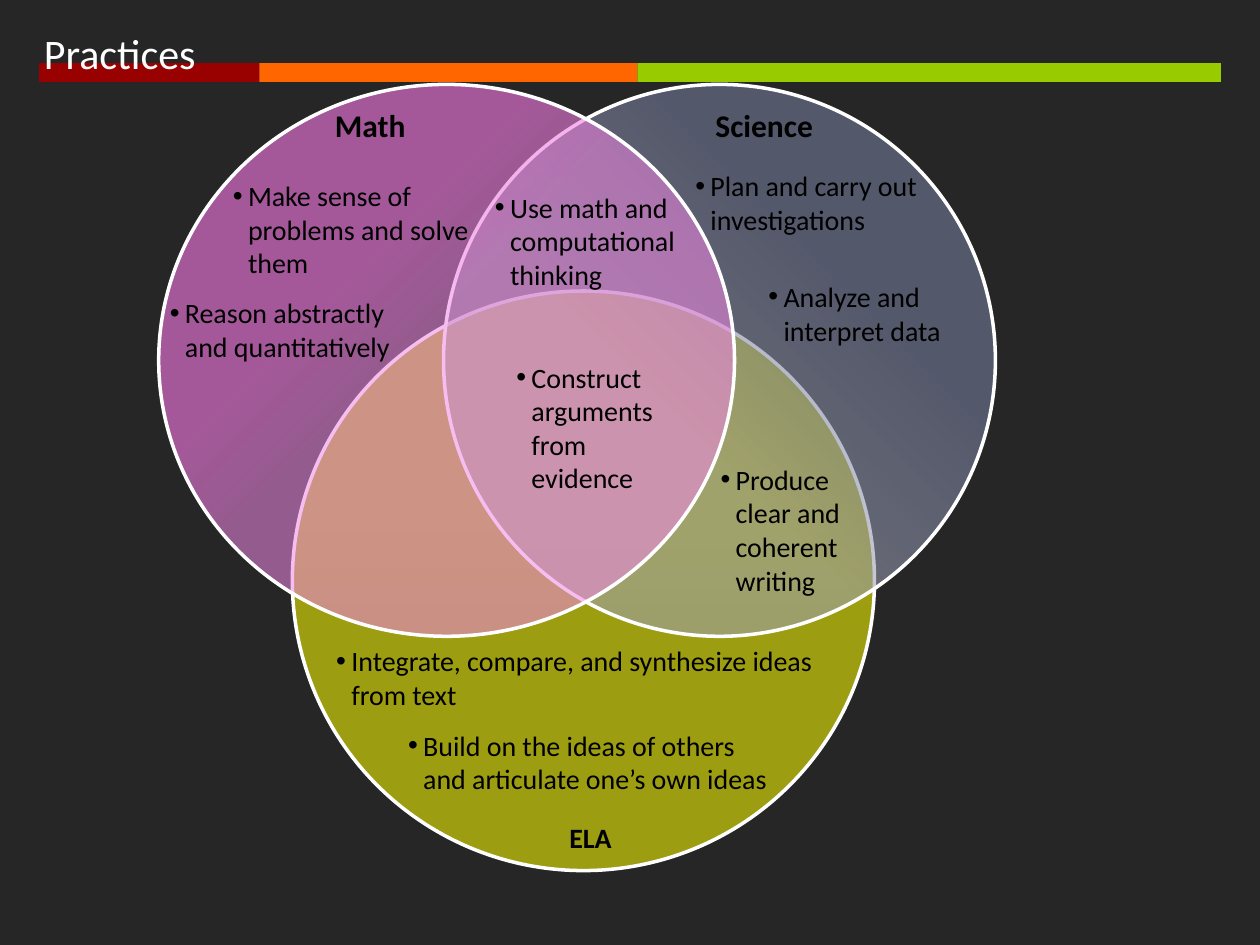
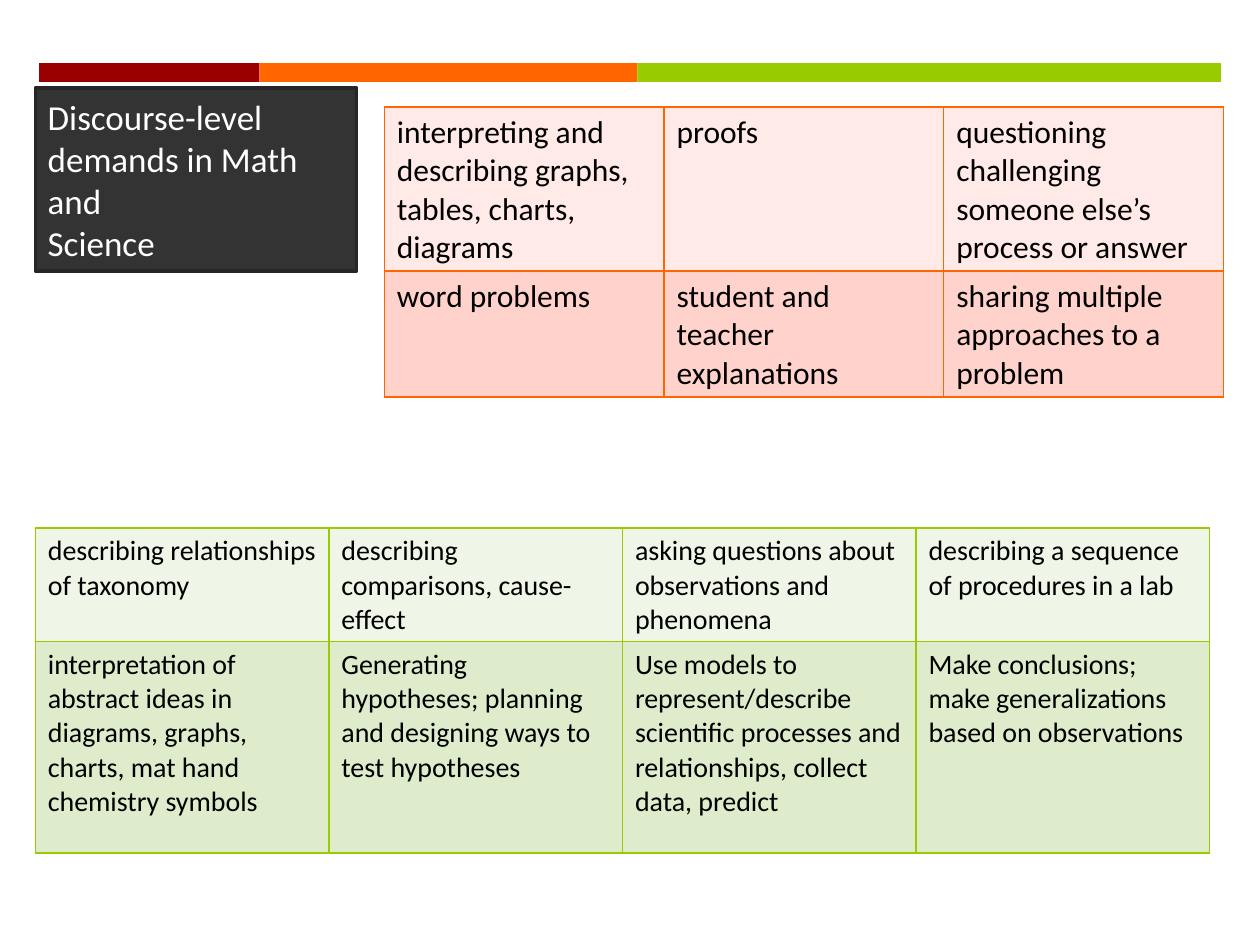
from dataclasses import dataclass

from pptx import Presentation
from pptx.dml.color import RGBColor
from pptx.enum.shapes import MSO_SHAPE
from pptx.oxml import parse_xml
from pptx.oxml.ns import nsdecls
from pptx.util import Emu, Pt

# Shared scale, font and colours
EMU_PER_PX = 9144  # 100 px to the inch
FONT = "Calibri"
WHITE, BLACK = "FFFFFF", "000000"
DARK, PANEL = "262626", "333333"
RED, ORANGE, GREEN = "990000", "FF6600", "99CC00"

BAND_LEFT, BAND_TOP, BAND_HEIGHT = 31, 50, 15
BANDS = ((175, RED), (300, ORANGE), (463, GREEN))
BULLET_INDENT = 12


@dataclass(frozen=True)
class Box:
    left: int
    top: int
    width: int
    height: int

    def emu(self) -> tuple:
        return tuple(px(value) for value in (self.left, self.top, self.width, self.height))


@dataclass(frozen=True)
class Stop:
    position: int
    color: str
    opacity: int


@dataclass(frozen=True)
class Circle:
    box: Box
    stops: tuple
    direction: str


@dataclass(frozen=True)
class Label:
    text: str
    box: Box
    size: int = 16


@dataclass(frozen=True)
class DemandTable:
    box: Box
    row_heights: tuple
    row_fills: tuple
    border: str
    size: int
    rows: tuple


def px(value: int) -> Emu:
    return Emu(value * EMU_PER_PX)


def rgb(color: str) -> RGBColor:
    return RGBColor.from_string(color)


# Drawing functions
def write_text(frame, text: str, *, size: int, color: str = BLACK,
               bold: bool = False, bullet: bool = False) -> None:
    """Write one paragraph for each line of the text."""
    frame.word_wrap = True
    for index, line in enumerate(text.split("\n")):
        paragraph = frame.paragraphs[0] if index == 0 else frame.add_paragraph()
        run = paragraph.add_run()
        run.text = line
        run.font.name = FONT
        run.font.size = Pt(size)
        run.font.bold = bold
        run.font.color.rgb = rgb(color)
        properties = paragraph._p.get_or_add_pPr()
        properties.set("algn", "l")
        if bullet:
            properties.set("marL", str(px(BULLET_INDENT)))
            properties.set("indent", str(-px(BULLET_INDENT)))
            properties.append(parse_xml(f'<a:buFont {nsdecls("a")} typeface="Arial"/>'))
            properties.append(parse_xml(f'<a:buChar {nsdecls("a")} char="•"/>'))


def add_text(slide, label: Label, **text_format) -> None:
    text_box = slide.shapes.add_textbox(*label.box.emu())
    write_text(text_box.text_frame, label.text, size=label.size, **text_format)


def add_filled_shape(slide, kind: MSO_SHAPE, box: Box, fill: str, line: str = ""):
    shape = slide.shapes.add_shape(kind, *box.emu())
    shape.shadow.inherit = False
    shape.fill.solid()
    shape.fill.fore_color.rgb = rgb(fill)
    if line:
        shape.line.color.rgb = rgb(line)
        shape.line.width = Pt(2)
    else:
        shape.line.fill.background()
    return shape


def add_circle(slide, circle: Circle) -> None:
    shape = add_filled_shape(slide, MSO_SHAPE.OVAL, circle.box, WHITE, WHITE)
    stops = "".join(
        f'<a:gs pos="{stop.position * 1000}"><a:srgbClr val="{stop.color}">'
        f'<a:alpha val="{stop.opacity * 1000}"/></a:srgbClr></a:gs>'
        for stop in circle.stops)
    gradient = parse_xml(f'<a:gradFill {nsdecls("a")} rotWithShape="1"><a:gsLst>{stops}</a:gsLst>'
                         f'{circle.direction}</a:gradFill>')
    properties = shape._element.spPr
    properties.replace(properties.find(gradient.tag.replace("gradFill", "solidFill")), gradient)


def add_demand_table(slide, spec_table: DemandTable) -> None:
    column_count = len(spec_table.rows[0])
    frame = slide.shapes.add_table(len(spec_table.rows), column_count, *spec_table.box.emu())
    table = frame.table
    table.first_row = table.horz_banding = False
    for column in table.columns:
        column.width = px(spec_table.box.width // column_count)
    for row, height, fill, texts in zip(table.rows, spec_table.row_heights,
                                        spec_table.row_fills, spec_table.rows):
        row.height = px(height)
        for cell, text in zip(row.cells, texts):
            write_text(cell.text_frame, text, size=spec_table.size)
            properties = cell._tc.get_or_add_tcPr()
            for side in "LRTB":
                properties.append(parse_xml(
                    f'<a:ln{side} {nsdecls("a")} w="{Pt(1)}"><a:solidFill>'
                    f'<a:srgbClr val="{spec_table.border}"/></a:solidFill></a:ln{side}>'))
            cell.fill.solid()
            cell.fill.fore_color.rgb = rgb(fill)


def add_banded_slide(presentation, background: str):
    slide = presentation.slides.add_slide(presentation.slide_layouts[6])
    slide.background.fill.solid()
    slide.background.fill.fore_color.rgb = rgb(background)
    left = BAND_LEFT
    for width, color in BANDS:
        add_filled_shape(slide, MSO_SHAPE.RECTANGLE, Box(left, BAND_TOP, width, BAND_HEIGHT), color)
        left += width
    return slide


# Content of the Venn diagram
def from_corner(left: int, right: int) -> str:
    """Radial gradient centred on a bottom corner."""
    return (f'<a:path path="circle"><a:fillToRect l="{left * 1000}" t="100000" '
            f'r="{right * 1000}" b="0"/></a:path>')


CIRCLES = (
    Circle(Box(232, 231, 462, 460), (Stop(37, "FFFF00", 54), Stop(61, "FFFF00", 57)),
           '<a:lin ang="16200000" scaled="0"/>'),
    Circle(Box(352, 67, 438, 438), (Stop(41, "9EA2B6", 54), Stop(69, "6E7492", 64)),
           from_corner(0, 100)),
    Circle(Box(126, 67, 457, 438), (Stop(54, "F187E4", 54), Stop(66, "EB75DA", 64)),
           from_corner(100, 0)),
)
SUBJECTS = (
    Label("Math", Box(256, 79, 85, 40), 18),
    Label("Science", Box(558, 79, 117, 40), 18),
    Label("ELA", Box(442, 646, 67, 37)),
)
PRACTICES = (
    Label("Make sense of problems and solve them", Box(175, 137, 225, 91)),
    Label("Reason abstractly and quantitatively", Box(125, 230, 217, 64)),
    Label("Plan and carry out investigations", Box(542, 129, 225, 64)),
    Label("Analyze and interpret data", Box(600, 217, 175, 64)),
    Label("Use math and computational thinking", Box(383, 146, 169, 91)),
    Label("Integrate, compare, and synthesize ideas from text", Box(257, 506, 398, 64)),
    Label("Build on the ideas of others and articulate one’s own ideas", Box(314, 573, 308, 64)),
    Label("Construct arguments from evidence", Box(400, 281, 150, 118)),
    Label("Produce clear and coherent writing", Box(562, 362, 132, 118)),
)

# Content of the demand tables
MATH_DEMANDS = DemandTable(
    Box(305, 85, 666, 230), (130, 100), ("FFEAE7", "FFD3CC"), ORANGE, 18,
    (("interpreting and describing graphs, tables, charts, diagrams",
      "proofs",
      "questioning challenging someone else’s process or answer"),
     ("word problems",
      "student and teacher explanations",
      "sharing multiple approaches to a problem")))
SCIENCE_DEMANDS = DemandTable(
    Box(28, 419, 932, 258), (90, 168), ("EFF6E7", "DEECCC"), GREEN, 16,
    (("describing relationships of taxonomy",
      "describing comparisons, cause-effect",
      "asking questions about observations and phenomena",
      "describing a sequence of procedures in a lab"),
     ("interpretation of abstract ideas in diagrams, graphs, charts, mat hand chemistry symbols",
      "Generating hypotheses; planning and designing ways to test hypotheses",
      "Use models to represent/describe scientific processes and relationships, "
      "collect data, predict",
      "Make conclusions; make generalizations based on observations")))


# Slides
def build_practices(presentation) -> None:
    slide = add_banded_slide(presentation, DARK)
    add_text(slide, Label("Practices", Box(25, 17, 183, 50), 24), color=WHITE)
    for circle in CIRCLES:
        add_circle(slide, circle)
    for subject in SUBJECTS:
        add_text(slide, subject, bold=True)
    for practice in PRACTICES:
        add_text(slide, practice, bullet=True)


def build_demands(presentation) -> None:
    slide = add_banded_slide(presentation, WHITE)
    panel = add_filled_shape(slide, MSO_SHAPE.RECTANGLE, Box(28, 70, 255, 145), PANEL, DARK)
    write_text(panel.text_frame, "Discourse-level\ndemands in Math\nand\nScience",
               size=20, color=WHITE)
    for demands in (MATH_DEMANDS, SCIENCE_DEMANDS):
        add_demand_table(slide, demands)


def main() -> None:
    presentation = Presentation()
    presentation.slide_width, presentation.slide_height = px(1000), px(750)
    build_practices(presentation)
    build_demands(presentation)
    presentation.save("out.pptx")


if __name__ == "__main__":
    main()
